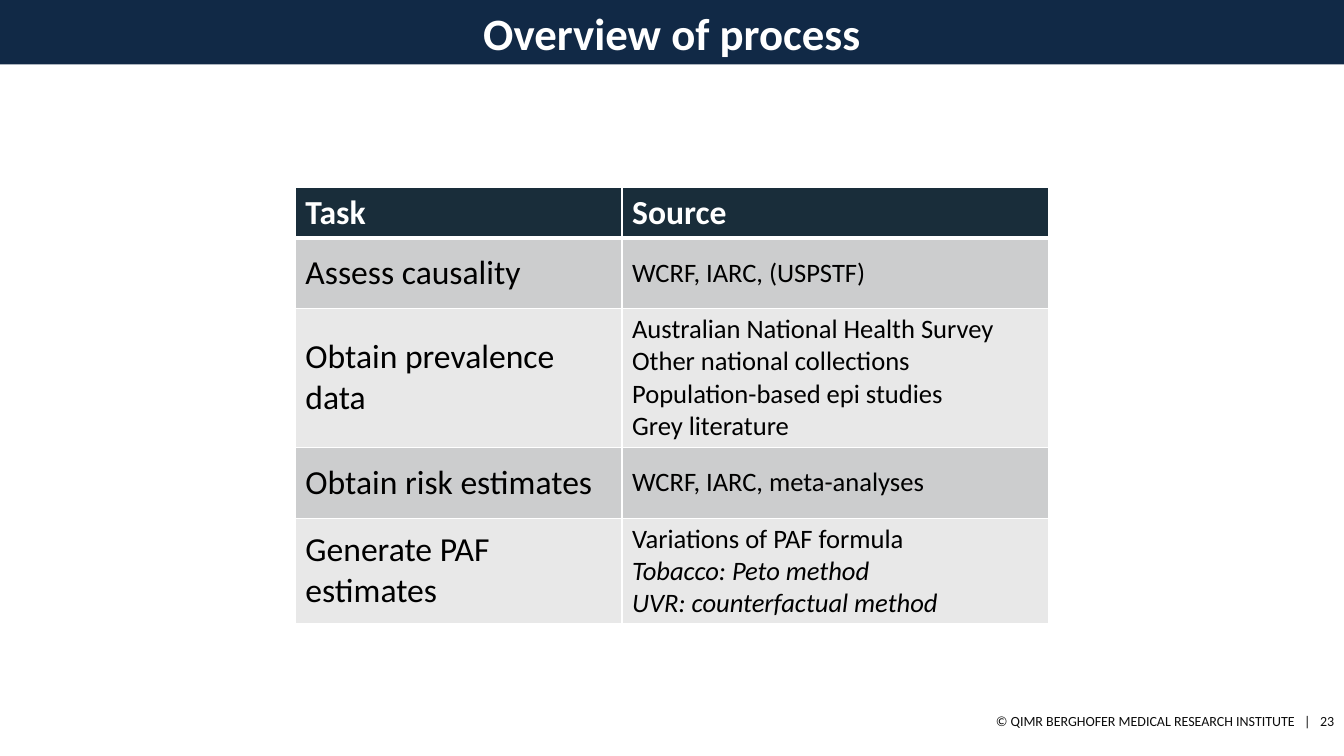
from pptx import Presentation
from pptx.dml.color import RGBColor
from pptx.enum import shapes, text
from pptx.oxml import ns, xmlchemy
from pptx.util import Inches, Pt

FONT = "Calibri"
NAVY = RGBColor(0x11, 0x29, 0x46)
HEADER = RGBColor(0x19, 0x2D, 0x3A)
BANDS = (RGBColor(0xCC, 0xCD, 0xCE), RGBColor(0xE8, 0xE8, 0xE8))
WHITE = RGBColor(0xFF, 0xFF, 0xFF)
BLACK = RGBColor(0, 0, 0)
FOOTER_INK = RGBColor(0x0D, 0x0D, 0x0D)

COLUMN_WIDTHS = (3.24, 4.23)
ROW_HEIGHTS = (0.5, 0.7, 1.38, 0.7, 1.05)
ROWS = (
    ("Task", "Source"),
    ("Assess causality", "WCRF, IARC, (USPSTF)"),
    ("Obtain prevalence data",
     "Australian National Health Survey\nOther national collections\n"
     "Population-based epi studies\nGrey literature"),
    ("Obtain risk estimates", "WCRF, IARC, meta-analyses"),
    ("Generate PAF estimates",
     "Variations of PAF formula\nTobacco: Peto method\nUVR: counterfactual method"),
)
ITALIC_LINES = ("Tobacco: Peto method", "UVR: counterfactual method")


def write(tf, content, size, color, bold=False, align=text.PP_ALIGN.LEFT):
    tf.text = content
    tf.word_wrap = True
    for p in tf.paragraphs:
        p.alignment = align
        for r in p.runs:
            r.font.name = FONT
            r.font.size = Pt(size)
            r.font.bold = bold
            r.font.italic = r.text in ITALIC_LINES
            r.font.color.rgb = color


def add_title_bar(s, content):
    sp = s.shapes.add_shape(shapes.MSO_SHAPE.RECTANGLE, 0, 0, Inches(13.33), Inches(0.64))
    sp.shadow.inherit = False
    sp.fill.solid()
    sp.fill.fore_color.rgb = NAVY
    sp.line.fill.background()
    write(sp.text_frame, content, 32, WHITE, True, text.PP_ALIGN.CENTER)


def add_footer(s, content):
    sp = s.shapes.add_textbox(Inches(5.22), Inches(6.95), Inches(8.11), Inches(0.4))
    sp.text_frame.vertical_anchor = text.MSO_ANCHOR.MIDDLE
    write(sp.text_frame, content, 10, FOOTER_INK, align=text.PP_ALIGN.RIGHT)


def set_borders(cell, top, bottom):
    tcPr = cell._tc.get_or_add_tcPr()
    for side, width in (("L", 1), ("R", 1), ("T", top), ("B", bottom)):
        ln = xmlchemy.OxmlElement(f"a:ln{side}")
        ln.set("w", str(Pt(width)))
        fill = xmlchemy.OxmlElement("a:solidFill")
        color = xmlchemy.OxmlElement("a:srgbClr")
        color.set("val", str(WHITE))
        fill.append(color)
        ln.append(fill)
        tcPr.append(ln)


def fill_cell(cell, content, row, column):
    is_header = row == 0
    set_borders(cell, 3 if row == 1 else 1, 3 if is_header else 1)
    cell.fill.solid()
    cell.fill.fore_color.rgb = HEADER if is_header else BANDS[(row - 1) % 2]
    if not is_header:
        cell.vertical_anchor = text.MSO_ANCHOR.MIDDLE
    size = 24 if is_header or column == 0 else 19
    write(cell.text_frame, content, size, WHITE if is_header else BLACK, is_header)


def add_task_table(s):
    table = s.shapes.add_table(
        len(ROWS), len(COLUMN_WIDTHS), Inches(2.93), Inches(1.86),
        Inches(sum(COLUMN_WIDTHS)), Inches(sum(ROW_HEIGHTS))).table
    for column, width in zip(table.columns, COLUMN_WIDTHS):
        column.width = Inches(width)
    for i, (height, contents) in enumerate(zip(ROW_HEIGHTS, ROWS)):
        table.rows[i].height = Inches(height)
        for j, content in enumerate(contents):
            fill_cell(table.cell(i, j), content, i, j)


def main():
    prs = Presentation()
    prs.slide_width = Inches(13.33)
    prs.slide_height = Inches(7.5)
    s = prs.slides.add_slide(prs.slide_layouts[6])
    add_footer(s, "© QIMR BERGHOFER MEDICAL RESEARCH INSTITUTE   |   23")
    add_task_table(s)
    add_title_bar(s, "Overview of process")
    prs.save("out.pptx")


if __name__ == "__main__":
    main()
